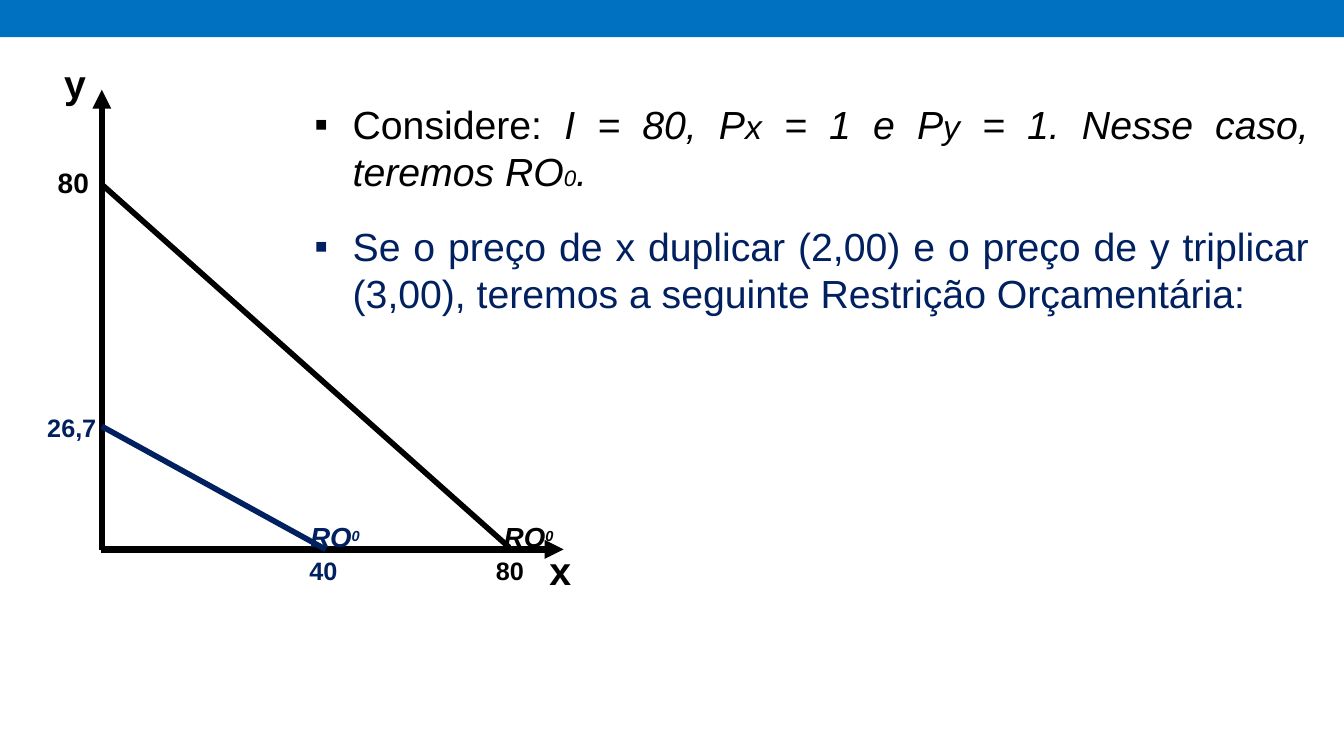
from lxml.etree import SubElement
from pptx import Presentation
from pptx.dml.color import RGBColor
from pptx.enum.shapes import MSO_CONNECTOR as Connector, MSO_SHAPE as Shape
from pptx.enum.text import MSO_AUTO_SIZE as AutoSize, PP_ALIGN as Align
from pptx.oxml.ns import qn
from pptx.util import Inches, Pt

BLACK = "000000"
NAVY = "002060"
BLUE = "0070C0"


def color(value):
    return RGBColor.from_string(value)


def style(font, size, ink, bold=False):
    font.name = "Arial"
    font.size = Pt(size)
    font.bold = bold
    font.color.rgb = color(ink)


def add_line(page, start, end, ink, width, arrow=False):
    line = page.shapes.add_connector(
        Connector.STRAIGHT, *[Inches(value) for value in (*start, *end)])
    line.line.color.rgb = color(ink)
    line.line.width = Pt(width)
    if arrow:
        SubElement(line.line._get_or_add_ln(), qn("a:tailEnd"), type="triangle")
    SubElement(line._element.spPr, qn("a:effectLst"))


def add_box(page, left, top, width, height, wrap):
    box = page.shapes.add_textbox(*[Inches(value) for value in (left, top, width, height)])
    box.text_frame.word_wrap = wrap
    box.text_frame.auto_size = AutoSize.NONE if wrap else AutoSize.SHAPE_TO_FIT_TEXT
    return box.text_frame.paragraphs[0]


def add_label(page, text, left, top, width, height, size, ink=BLACK, align=Align.LEFT):
    para = add_box(page, left, top, width, height, False)
    para.alignment = align
    style(para.font, size, ink, True)
    para.add_run().text = text


def add_line_name(page, left, top, ink):
    para = add_box(page, left, top, 0.77, 0.48, False)
    style(para.font, 34, ink, True)
    para.font.italic = True
    for text, size in (("RO", 34), ("0", 18)):
        span = para.add_run()
        span.text = text
        span.font.size = Pt(size)
        span._r.get_or_add_rPr().set("baseline", "-25000")


def add_header(page, width, height):
    band = page.shapes.add_shape(Shape.RECTANGLE, 0, 0, Inches(width), Inches(height))
    band.shadow.inherit = False
    band.fill.solid()
    band.fill.fore_color.rgb = color(BLUE)
    band.line.fill.background()


def add_graph(page, left, base):
    add_line(page, (left, base + 0.01), (left, base - 4.56), BLACK, 4.5, True)
    add_line(page, (left - 0.01, base), (left + 4.58, base), BLACK, 4.5, True)
    add_label(page, "x", left + 4.34, base - 0.08, 0.42, 0.57, 28)
    add_label(page, "y", left - 0.48, base - 4.91, 0.42, 0.57, 28, align=Align.RIGHT)
    add_label(page, "80", left - 0.54, base - 3.86, 0.51, 0.43, 20, align=Align.RIGHT)
    add_label(page, "26,7", left - 0.64, base - 1.41, 0.69, 0.4, 18, NAVY)
    budgets = (
        (3.62, (4.04, 0.02), "80", 3.81, 3.89, BLACK),
        (1.22, (2.22, 0), "40", 1.96, 1.97, NAVY),
    )
    for rise, (run, lift), value, value_left, name_left, ink in budgets:
        add_line(page, (left, base - rise), (left + run, base - lift), ink, 4)
        add_label(page, value, left + value_left, base + 0.01, 0.48, 0.4, 18, ink)
        add_line_name(page, left + name_left, base - 0.66, ink)


def add_bullet(page, left, top, ink, spans):
    para = add_box(page, left, top, 10.06, 0.61, True)
    para.alignment = Align.JUSTIFY
    properties = para._p.get_or_add_pPr()
    properties.set("marL", str(Inches(0.38)))
    properties.set("indent", str(-Inches(0.38)))
    SubElement(SubElement(properties, qn("a:buClr")), qn("a:srgbClr"), val=ink)
    SubElement(properties, qn("a:buFont"), typeface="Arial")
    SubElement(properties, qn("a:buChar"), char="▪")
    style(para.font, 28, ink)
    for text, size, italic in spans:
        span = para.add_run()
        span.text = text
        span.font.size = Pt(size)
        span.font.italic = italic


def add_explanation(page, left, top):
    add_bullet(page, left, top, BLACK, (
        ("Considere: ", 28, False),
        ("I = 80, P", 28, True),
        ("x", 24, True),
        (" = 1 e P", 28, True),
        ("y", 24, True),
        (" = 1. Nesse caso, teremos RO", 28, True),
        ("0", 16, True),
        (".", 28, True),
    ))
    add_bullet(page, left, top + 1.21, NAVY, (
        ("Se o preço de x duplicar (2,00) e o preço de y triplicar (3,00), "
         "teremos a seguinte Restrição Orçamentária:", 28, False),
    ))


def main():
    deck = Presentation()
    deck.slide_width = Inches(13.33)
    deck.slide_height = Inches(7.5)
    page = deck.slides.add_slide(deck.slide_layouts[6])
    add_header(page, 13.33, 0.37)
    add_graph(page, 1.01, 5.45)
    add_explanation(page, 3.02, 0.95)
    deck.save("out.pptx")


if __name__ == "__main__":
    main()
